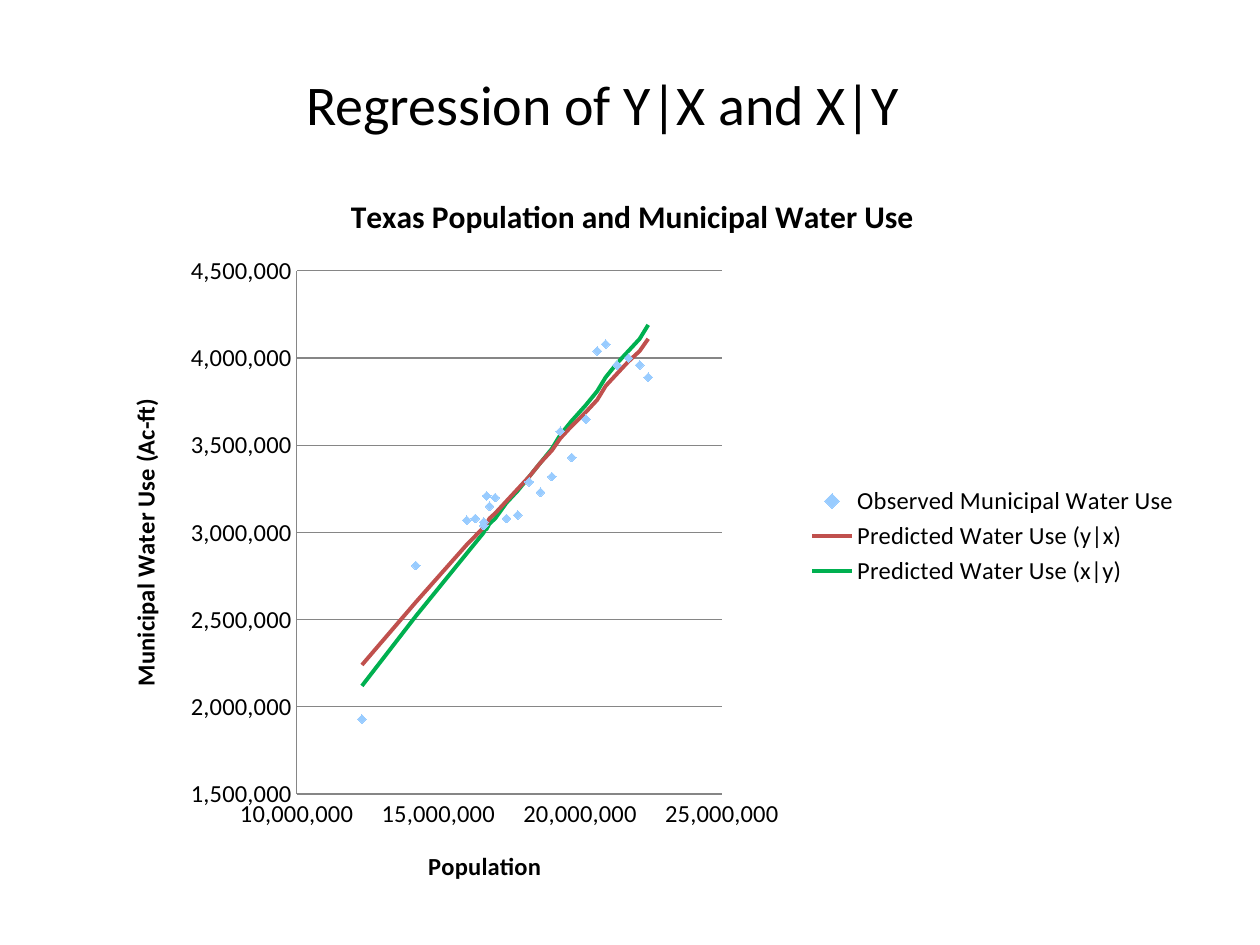
"""Build the slide comparing the two regressions of water use and population."""
from lxml.etree import SubElement
from pptx import Presentation
from pptx.chart.data import XyChartData
from pptx.dml.color import RGBColor
from pptx.enum.chart import XL_AXIS_CROSSES, XL_CHART_TYPE, XL_LEGEND_POSITION, XL_MARKER_STYLE, XL_TICK_MARK
from pptx.oxml.ns import qn
from pptx.util import Cm, Pt


def rgb(value):
    return RGBColor.from_string(value)


def set_font(font, size, bold=False):
    font.name = "Calibri"
    font.size = Pt(size)
    font.bold = bold
    font.color.rgb = rgb("000000")


prs = Presentation()
prs.slide_width, prs.slide_height = Cm(25.4), Cm(19.05)
s = prs.slides.add_slide(prs.slide_layouts[6])

population = [123, 142, 160, 163, 166, 166, 167, 168, 170, 174, 178, 182,
              186, 190, 193, 197, 202, 206, 209, 213, 217, 221, 224]
water_use = {
    "Observed Municipal Water Use": [
        193, 281, 307, 308, 306, 304, 321, 315, 320, 308, 310, 329,
        323, 332, 358, 343, 365, 404, 408, 396, 400, 396, 389],
    "Predicted Water Use (y|x)": [
        224, 260, 293, 298, 303, 304, 305, 308, 311, 318, 325, 332,
        340, 347, 354, 361, 369, 376, 384, 391, 398, 404, 411],
    "Predicted Water Use (x|y)": [
        212, 252, 288, 294, 300, 301, 302, 305, 308, 317, 324, 332,
        340, 348, 356, 364, 373, 381, 389, 397, 404, 411, 419],
}
data = XyChartData(number_format="#,##0")
for name, values in water_use.items():
    series = data.add_series(name)
    for x, y in zip(population, values):
        series.add_data_point(x * 100000, y * 10000)

chart = s.shapes.add_chart(XL_CHART_TYPE.XY_SCATTER, Cm(1.47), Cm(3.38),
                           Cm(22.56), Cm(14.86), data).chart
set_font(chart.font, 14)

chart.has_title = True
p = chart.chart_title.text_frame.paragraphs[0]
p.text = "Texas Population and Municipal Water Use"
set_font(p.font, 18, True)
chart.chart_title.include_in_layout = False

chart.has_legend = True
chart.legend.position = XL_LEGEND_POSITION.RIGHT
chart.legend.include_in_layout = False
set_font(chart.legend.font, 14)

for axis, title, low, high, step in (
        (chart.category_axis, "Population", 10000000, 25000000, 5000000),
        (chart.value_axis, "Municipal Water Use (Ac-ft)", 1500000, 4500000, 500000)):
    axis.minimum_scale, axis.maximum_scale, axis.major_unit = low, high, step
    axis.major_tick_mark = axis.minor_tick_mark = XL_TICK_MARK.NONE
    axis.crosses = XL_AXIS_CROSSES.MINIMUM
    axis.tick_labels.number_format = "#,##0"
    axis.tick_labels.number_format_is_linked = False
    set_font(axis.tick_labels.font, 14)
    axis.format.line.color.rgb = rgb("868686")
    p = axis.axis_title.text_frame.paragraphs[0]
    p.text = title
    set_font(p.font, 14, True)
chart.category_axis.has_major_gridlines = False
chart.value_axis.has_major_gridlines = True
chart.value_axis.major_gridlines.format.line.color.rgb = rgb("868686")

observed, *predicted = chart.plots[0].series
observed.format.line.fill.background()
observed.marker.style = XL_MARKER_STYLE.DIAMOND
observed.marker.size = 5
observed.marker.format.fill.solid()
observed.marker.format.fill.fore_color.rgb = rgb("99CCFF")
observed.marker.format.line.color.rgb = rgb("99CCFF")
for series, color in zip(predicted, ("C0504D", "00B050")):
    series.smooth = False
    series.marker.style = XL_MARKER_STYLE.NONE
    series.format.line.color.rgb = rgb(color)
    series.format.line.width = Pt(2.25)

area = chart.plots[0]._element.getparent()
for old in area.findall(qn("c:layout")):
    area.remove(old)
layout = SubElement(area, qn("c:layout"))
area.insert(0, layout)
manual = SubElement(layout, qn("c:manualLayout"))
for tag, value in (("layoutTarget", "inner"), ("xMode", "edge"), ("yMode", "edge"),
                   ("x", "0.2"), ("y", "0.14"), ("w", "0.38"), ("h", "0.71")):
    SubElement(manual, qn("c:" + tag)).set("val", value)

tf = s.shapes.add_textbox(Cm(5.92), Cm(1.27), Cm(12.6), Cm(1.63)).text_frame
tf.word_wrap = False
p = tf.paragraphs[0]
p.text = "Regression of Y|X and X|Y"
set_font(p.font, 32)

prs.save("out.pptx")
